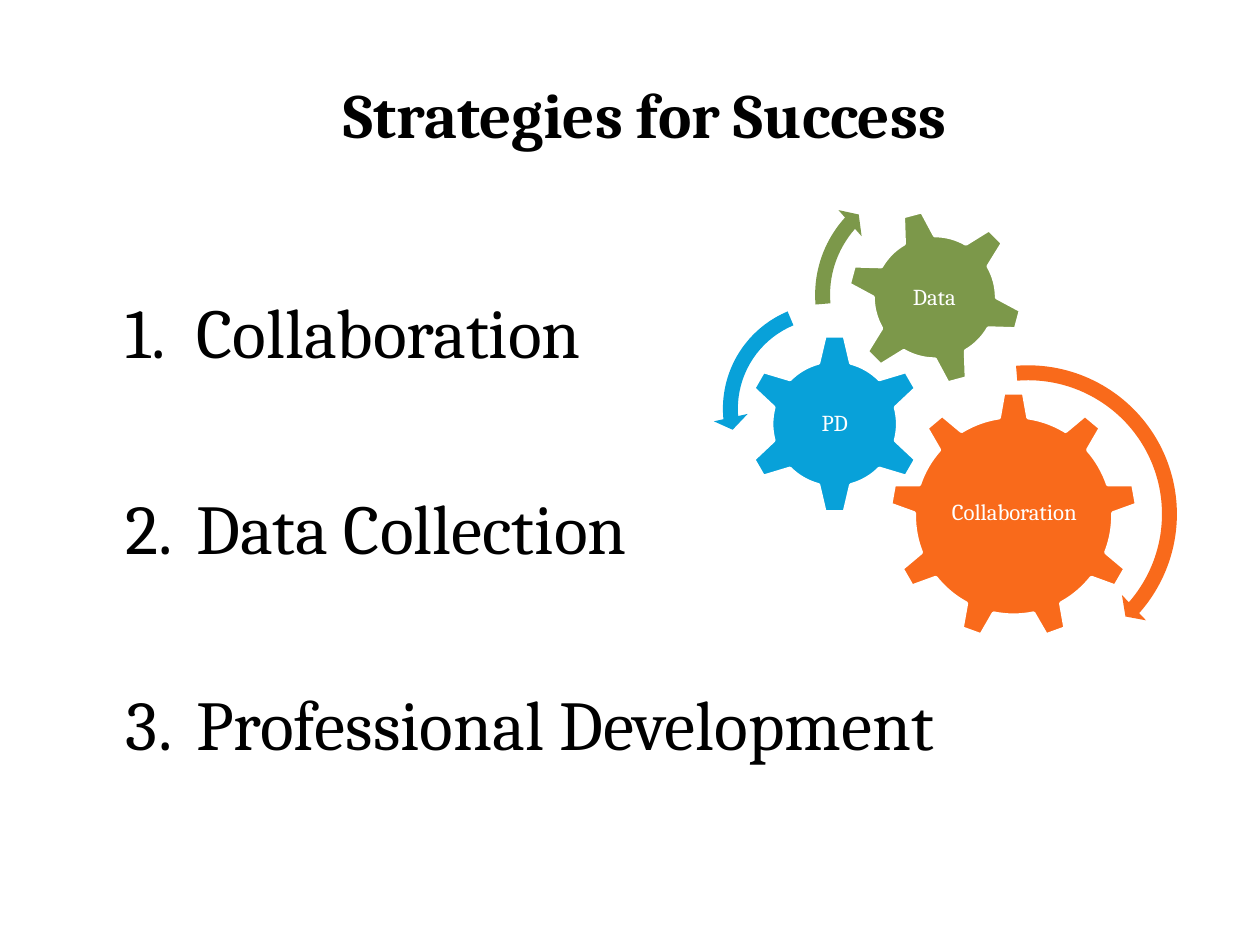
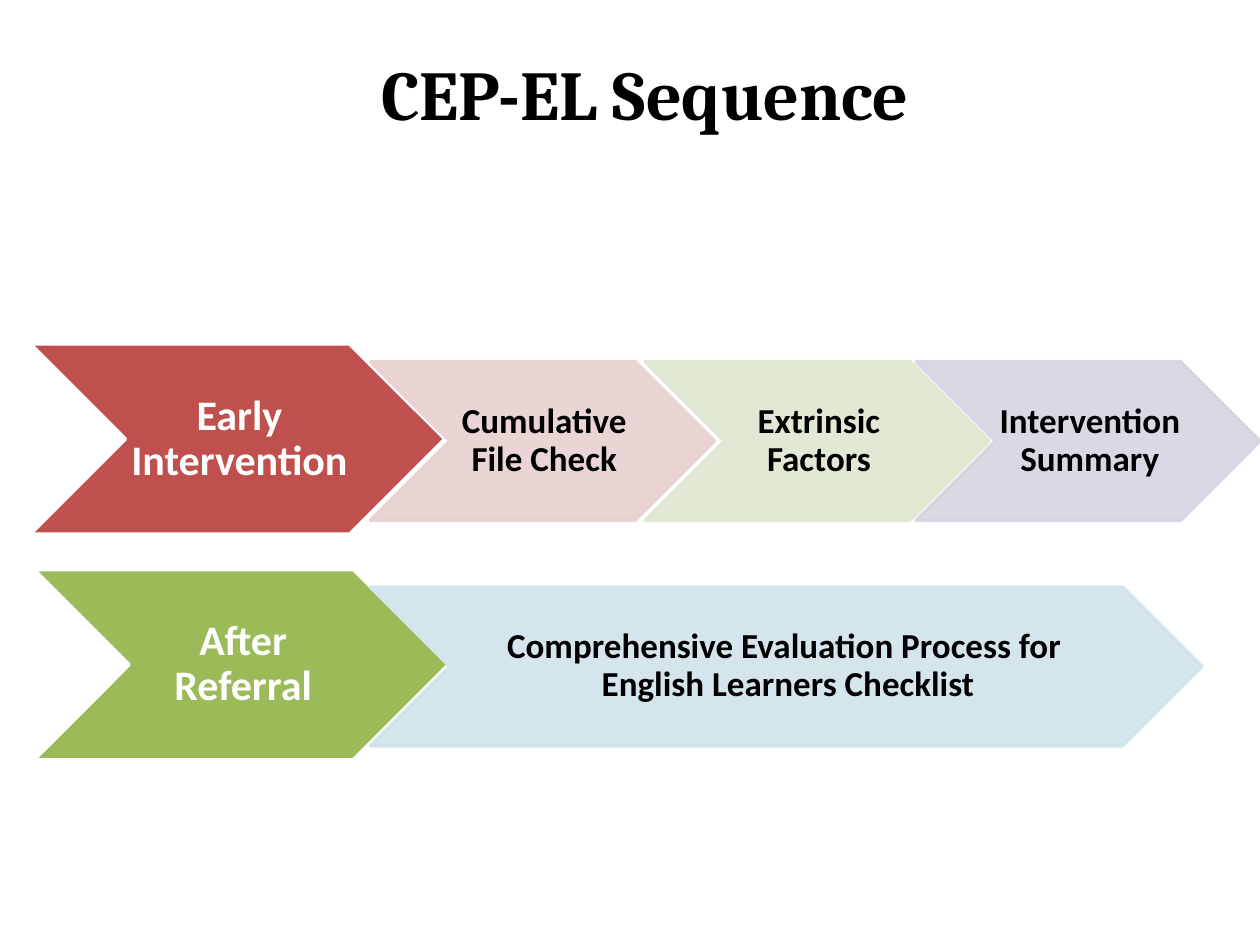
"""Build two slides: strategies with interlocking gears, and the CEP-EL chevron sequence."""
from lxml import etree
from pptx import Presentation
from pptx.dml.color import RGBColor
from pptx.enum.shapes import MSO_SHAPE
from pptx.enum.text import MSO_ANCHOR, PP_ALIGN
from pptx.oxml.ns import qn
from pptx.util import Inches, Pt

GEAR_6, GEAR_9 = MSO_SHAPE.GEAR_6, MSO_SHAPE.GEAR_9
TURN, LEFT_TURN = MSO_SHAPE.CIRCULAR_ARROW, MSO_SHAPE.LEFT_CIRCULAR_ARROW
CHEVRON = MSO_SHAPE.CHEVRON
TOP, MIDDLE, BOTTOM = MSO_ANCHOR.TOP, MSO_ANCHOR.MIDDLE, MSO_ANCHOR.BOTTOM
LEFT, CENTER = PP_ALIGN.LEFT, PP_ALIGN.CENTER

COLORS = {
    "black": "000000", "white": "FFFFFF",
    "orange": "F96A1B", "blue": "08A1D9", "olive": "7C984A",
    "red": "C0504D", "green": "9BBB59",
    "pale red": "E8D0D0", "pale green": "DEE7D1",
    "pale purple": "D8D3E0", "pale blue": "D0E3EA",
}
SERIF, SANS = "Cambria", "Calibri"

STRATEGIES = ["Collaboration", "Data Collection", "Professional Development"]

# label, color, gear, gear box, rotation, label box
GEARS = [
    ("Collaboration", "orange", GEAR_9, (7.06, 3.11, 1.97, 1.97), 0, (7.46, 3.57, 1.18, 1.01)),
    ("PD", "blue", GEAR_6, (5.91, 2.65, 1.43, 1.43), 0, (6.27, 3.01, 0.71, 0.71)),
    ("Data", "olive", GEAR_6, (6.72, 1.66, 1.4, 1.4), 345, (7.02, 1.97, 0.79, 0.79)),
]
ARROWS = [
    ("orange", TURN, (6.9, 2.82, 2.52, 2.52), (0.047, 2.99, 24.895, 159.2, 0.055)),
    ("blue", LEFT_TURN, (5.66, 2.33, 1.83, 1.83), (0.065, 4.3, 104.891, 148.378, 0.075)),
    ("olive", TURN, (6.39, 1.35, 1.98, 1.98), (0.06, 3.941, 133.138, 105.082, 0.07)),
]

SEQUENCE = [
    {"lead": ("Early Intervention", "red", 0.24), "top": 2.73, "steps": [
        ("Cumulative File Check", "pale red", 2.94, 2.73),
        ("Extrinsic Factors", "pale green", 5.12, 2.73),
        ("Intervention Summary", "pale purple", 7.27, 2.73)]},
    {"lead": ("After Referral", "green", 0.27), "top": 4.52, "steps": [
        ("Comprehensive Evaluation Process for \vEnglish Learners Checklist",
         "pale blue", 2.94, 6.6)]},
]
LEAD_WIDTH, LEAD_HEIGHT = 3.29, 1.51
STEP_HEIGHT, STEP_DROP = 1.26, 0.14


def rgb(color):
    return RGBColor.from_string(COLORS[color])


def inches(box):
    return [Inches(v) for v in box]


def write(tf, text, size, font, color, bold=False, anchor=MIDDLE, align=CENTER,
          margins=(0.02, 0.02, 0.02, 0.02), spacing=0.9):
    tf.word_wrap = True
    tf.vertical_anchor = anchor
    tf.margin_left, tf.margin_top, tf.margin_right, tf.margin_bottom = inches(margins)
    tf.text = text
    for p in tf.paragraphs:
        p.alignment = align
        p.line_spacing = spacing
        for r in p.runs:
            r.font.size, r.font.name, r.font.bold = Pt(size), font, bold
            r.font.color.rgb = rgb(color)


def add_text(s, box, *args, **kwargs):
    tf = s.shapes.add_textbox(*inches(box)).text_frame
    write(tf, *args, **kwargs)
    return tf


def add_title(s, text, size, left, top):
    add_text(s, (left, top, 8.92, 1.08), text, size, SERIF, "black", bold=True,
             anchor=BOTTOM, margins=(0.1, 0.05, 0.1, 0.05), spacing=1.0)


def add_filled(s, kind, box, color, line=None, alpha=None):
    sp = s.shapes.add_shape(kind, *inches(box))
    sp.shadow.inherit = False
    sp.fill.solid()
    sp.fill.fore_color.rgb = rgb(color)
    if line:
        sp.line.color.rgb = rgb(line)
        sp.line.width = Pt(2)
    else:
        sp.line.fill.background()
    if alpha:
        for clr in sp.element.spPr.iter(qn("a:srgbClr")):
            etree.SubElement(clr, qn("a:alpha"), val=str(alpha * 1000))
    return sp


def number(p, start):
    pPr = p._p.get_or_add_pPr()
    pPr.set("marL", str(Inches(0.56)))
    pPr.set("indent", str(-Inches(0.56)))
    etree.SubElement(pPr, qn("a:buFont"), typeface="+mj-lt")
    etree.SubElement(pPr, qn("a:buAutoNum"), type="arabicPeriod", startAt=str(start))


def build_strategies(s):
    add_title(s, "Strategies for Success", 36, 0.66, 0.17)
    tf = add_text(s, (0.9, 2.24, 8.92, 4.92), "\n".join(STRATEGIES), 40, SERIF, "black",
                  anchor=TOP, align=LEFT, margins=(0.1, 0.05, 0.1, 0.05), spacing=1.0)
    for i, p in enumerate(tf.paragraphs):
        if i:
            p.space_before = Pt(64)
        number(p, i + 1)
    for label, color, kind, box, rotation, label_box in GEARS:
        add_filled(s, kind, box, color, "white").rotation = rotation
        add_text(s, label_box, label, 13, SERIF, "white")
    for color, kind, box, adjustments in ARROWS:
        sp = add_filled(s, kind, box, color)
        for i, value in enumerate(adjustments):
            sp.adjustments[i] = value


def build_sequence(s):
    add_title(s, "CEP-EL Sequence", 40, 0.66, 0.04)
    for row in SEQUENCE:
        text, color, left = row["lead"]
        sp = add_filled(s, CHEVRON, (left, row["top"], LEAD_WIDTH, LEAD_HEIGHT), color, "white")
        write(sp.text_frame, text, 24, SANS, "white", bold=True, margins=(0.03, 0.02, 0, 0.02))
        step_top = row["top"] + STEP_DROP
        for text, color, left, width in row["steps"]:
            sp = add_filled(s, CHEVRON, (left, step_top, width, STEP_HEIGHT), color, color, 90)
            write(sp.text_frame, text, 20, SANS, "black", bold=True, margins=(0.03, 0.01, 0, 0.01))


def main():
    prs = Presentation()
    prs.slide_width, prs.slide_height = Inches(10), Inches(7.5)
    for build in (build_strategies, build_sequence):
        build(prs.slides.add_slide(prs.slide_layouts[6]))
    prs.save("out.pptx")


if __name__ == "__main__":
    main()
